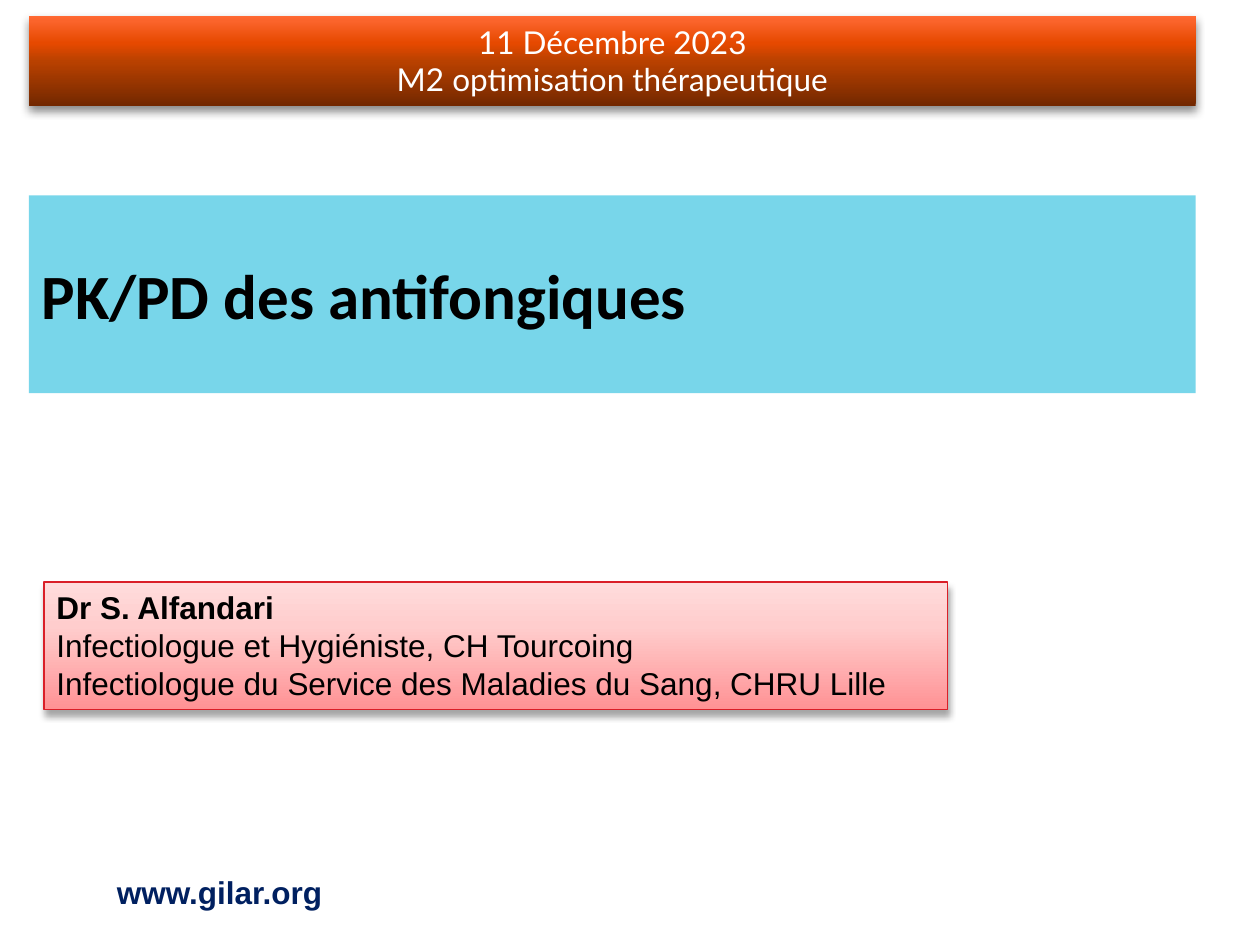
from dataclasses import dataclass
from typing import Optional

from lxml.etree import SubElement
from pptx import Presentation
from pptx.dml.color import RGBColor
from pptx.enum.shapes import MSO_SHAPE
from pptx.enum.text import MSO_ANCHOR, PP_ALIGN
from pptx.oxml.ns import qn
from pptx.util import Inches, Pt

BLACK = RGBColor(0x00, 0x00, 0x00)
WHITE = RGBColor(0xFF, 0xFF, 0xFF)
NAVY = RGBColor(0x00, 0x20, 0x60)
CYAN = RGBColor(0x78, 0xD6, 0xEA)
RED = RGBColor(0xDA, 0x1F, 0x28)
ORANGE_STOPS = (
    (0, RGBColor(0x73, 0x28, 0x00)),
    (50, RGBColor(0xB9, 0x41, 0x00)),
    (70, RGBColor(0xE6, 0x49, 0x00)),
    (100, RGBColor(0xFF, 0x69, 0x33)),
)
PINK_STOPS = (
    (0, RGBColor(0xFF, 0x92, 0x94)),
    (65, RGBColor(0xFF, 0xCD, 0xCD)),
    (100, RGBColor(0xFF, 0xDC, 0xDC)),
)


@dataclass(frozen=True)
class Line:
    text: str
    bold: bool = False


@dataclass(frozen=True)
class Shadow:
    opacity: int
    blur: float
    distance: float


@dataclass(frozen=True)
class Panel:
    box: tuple[float, float, float, float]
    lines: tuple[Line, ...]
    font: str
    color: RGBColor
    align: PP_ALIGN = PP_ALIGN.LEFT
    stops: tuple = ()
    border: Optional[RGBColor] = None
    shadow: Optional[Shadow] = None


PANELS = (
    Panel(
        (0.35, 4.62, 7.17, 1.01),
        (
            Line("Dr S. Alfandari", True),
            Line("Infectiologue et Hygiéniste, CH Tourcoing"),
            Line("Infectiologue du Service des Maladies du Sang, CHRU Lille"),
        ),
        "Arial", BLACK, stops=PINK_STOPS, border=RED, shadow=Shadow(35, 4, 3),
    ),
    Panel(
        (0.23, 0.13, 9.26, 0.71),
        (Line("11 Décembre 2023"), Line("M2 optimisation thérapeutique")),
        "Lato", WHITE, PP_ALIGN.CENTER, ORANGE_STOPS, shadow=Shadow(45, 5, 3),
    ),
    Panel((0.83, 6.88, 1.97, 0.4), (Line("www.gilar.org", True),), "Arial", NAVY),
)


def place(sp, box: tuple[float, float, float, float]) -> None:
    sp.left, sp.top, sp.width, sp.height = map(Inches, box)


def add_run(p, line: Line, font: str, size: float, color: RGBColor) -> None:
    r = p.add_run()
    r.text = line.text
    r.font.name = font
    r.font.size = Pt(size)
    r.font.bold = line.bold
    r.font.color.rgb = color


def fill_gradient(sp, stops: tuple) -> None:
    sp.fill.gradient()
    sp.fill.gradient_angle = 90
    gs_list = sp._element.spPr.find(qn("a:gradFill")).find(qn("a:gsLst"))
    for gs in list(gs_list):
        gs_list.remove(gs)
    for position, color in stops:
        gs = SubElement(gs_list, qn("a:gs"), pos=str(position * 1000))
        SubElement(gs, qn("a:srgbClr"), val=str(color))


def cast_shadow(sp, shadow: Shadow) -> None:
    effects = sp._element.spPr.find(qn("a:effectLst"))
    outer = SubElement(
        effects, qn("a:outerShdw"), blurRad=str(Pt(shadow.blur)),
        dist=str(Pt(shadow.distance)), dir="5400000", rotWithShape="0",
    )
    color = SubElement(outer, qn("a:srgbClr"), val=str(BLACK))
    SubElement(color, qn("a:alpha"), val=str(shadow.opacity * 1000))


def add_panel(s, panel: Panel) -> None:
    sp = s.shapes.add_shape(MSO_SHAPE.RECTANGLE, *map(Inches, panel.box))
    sp.shadow.inherit = False
    if panel.stops:
        fill_gradient(sp, panel.stops)
    else:
        sp.fill.solid()
        sp.fill.fore_color.rgb = WHITE
    if panel.border:
        sp.line.color.rgb = panel.border
        sp.line.width = Pt(0.75)
    else:
        sp.line.fill.background()
    if panel.shadow:
        cast_shadow(sp, panel.shadow)
    tf = sp.text_frame
    tf.word_wrap = True
    tf.vertical_anchor = MSO_ANCHOR.TOP
    for i, line in enumerate(panel.lines):
        p = tf.add_paragraph() if i else tf.paragraphs[0]
        p.alignment = panel.align
        add_run(p, line, panel.font, 18, panel.color)


def add_title(s) -> None:
    sp = s.shapes.title
    place(sp, (0.23, 1.55, 9.26, 1.57))
    sp.fill.solid()
    sp.fill.fore_color.rgb = CYAN
    tf = sp.text_frame
    tf.word_wrap = True
    tf.vertical_anchor = MSO_ANCHOR.MIDDLE
    p = tf.paragraphs[0]
    p.alignment = PP_ALIGN.LEFT
    add_run(p, Line("PK/PD des antifongiques", True), "Calibri", 36, BLACK)


def main() -> None:
    prs = Presentation()
    prs.slide_width, prs.slide_height = Inches(10), Inches(7.5)
    s = prs.slides.add_slide(prs.slide_layouts[0])
    subtitle = s.placeholders[1]._element
    subtitle.getparent().remove(subtitle)
    add_title(s)
    for panel in PANELS:
        add_panel(s, panel)
    prs.save("out.pptx")


if __name__ == "__main__":
    main()
